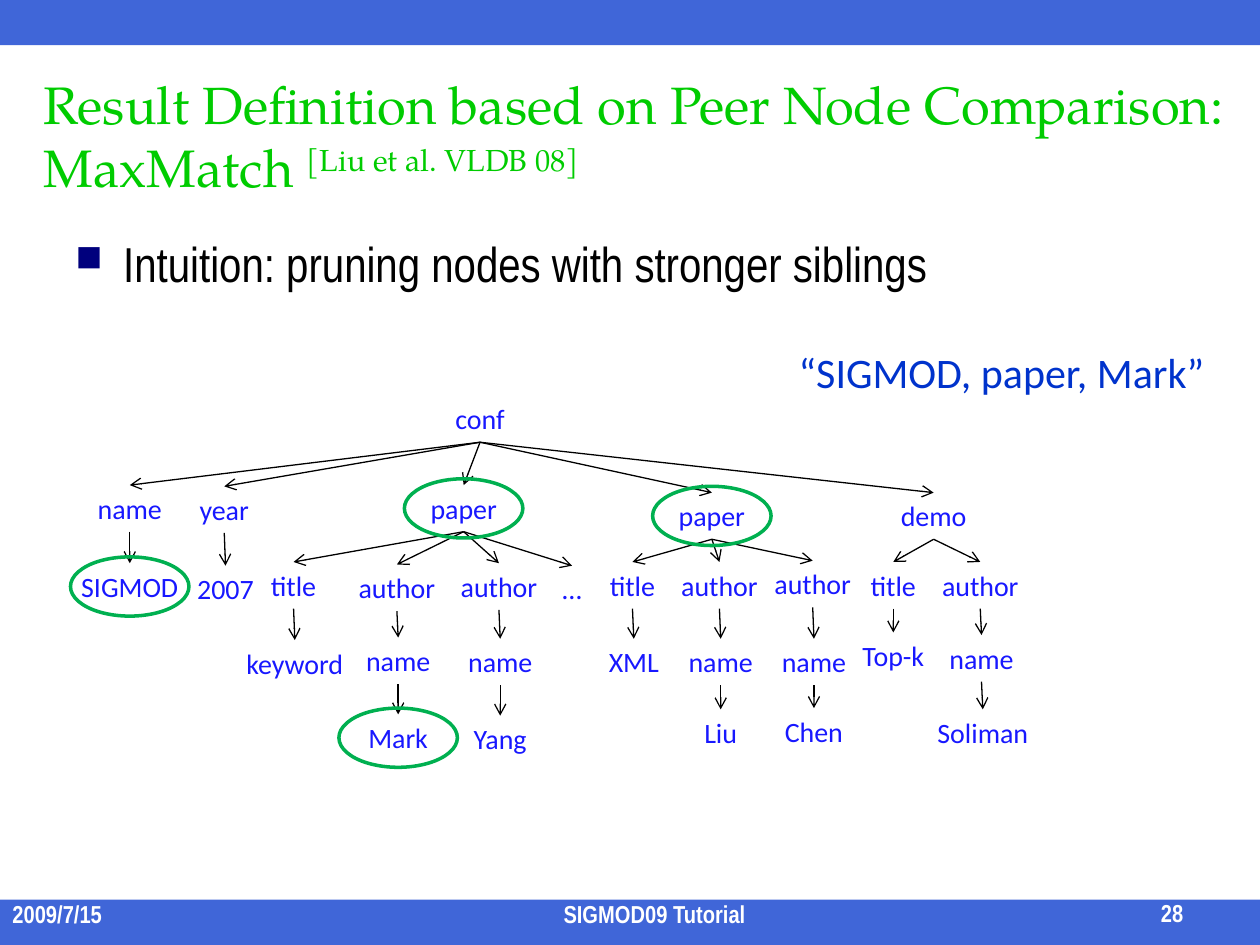
from dataclasses import dataclass
from typing import Iterator

from lxml.etree import SubElement
from pptx import Presentation
from pptx.dml.color import RGBColor
from pptx.enum.shapes import MSO_CONNECTOR, MSO_SHAPE
from pptx.enum.text import MSO_ANCHOR, PP_ALIGN
from pptx.oxml.ns import qn
from pptx.util import Emu, Inches, Pt

BAND_BLUE = RGBColor(0x00, 0x33, 0xCC)
TITLE_GREEN = RGBColor(0x00, 0xCC, 0x00)
NODE_BLUE = RGBColor(0x18, 0x18, 0xFF)
MATCH_GREEN = RGBColor(0x00, 0xB0, 0x50)
BLACK = RGBColor(0x00, 0x00, 0x00)
WHITE = RGBColor(0xFF, 0xFF, 0xFF)
BULLET_NAVY = "00007D"

SERIF, NARROW, SANS = "TeX Gyre Pagella", "Arial Narrow", "Calibri"

# The slide is a grid of 100 columns by 75 rows.
COLUMNS, ROWS = 100, 75
SLIDE_WIDTH, SLIDE_HEIGHT = Inches(10), Inches(7.5)
BAND_ROWS = 3.6
NODE_ROWS = 3.7
RING_COLUMNS, RING_ROWS = 9.4, 4.7


@dataclass(frozen=True)
class Node:
    """A tree label: centre column, top row, width in columns."""
    label: str
    center: float
    top: float
    width: float
    children: tuple["Node", ...] = ()
    matched: bool = False


@dataclass(frozen=True)
class Style:
    font: str
    size: float
    color: RGBColor
    bold: bool = False
    align: PP_ALIGN = PP_ALIGN.LEFT
    anchor: MSO_ANCHOR = MSO_ANCHOR.TOP


@dataclass(frozen=True)
class Footer:
    text: str
    left: float
    top: float
    width: float
    align: PP_ALIGN


TREE = Node("conf", 38.1, 31.4, 6.2, (
    Node("name", 10.3, 38.5, 7.6, (
        Node("SIGMOD", 10.3, 44.7, 10.6, matched=True),)),
    Node("year", 17.8, 38.6, 6.6, (Node("2007", 17.9, 44.9, 9.3),)),
    Node("paper", 36.8, 38.5, 8.1, (
        Node("title", 23.3, 44.6, 7, (Node("keyword", 23.4, 50.8, 10.4),)),
        Node("author", 31.5, 44.8, 8.6, (
            Node("name", 31.6, 50.6, 8.2, (
                Node("Mark", 31.6, 56.7, 12.8, matched=True),)),)),
        Node("author", 39.6, 44.7, 9.1, (
            Node("name", 39.7, 50.7, 7.9, (Node("Yang", 39.7, 56.8, 7),)),)),
        Node("…", 45.4, 44.9, 7),
    ), matched=True),
    Node("paper", 56.5, 39.1, 8.7, (
        Node("title", 50.2, 44.6, 7, (Node("XML", 50.3, 50.7, 9.5),)),
        Node("author", 57.1, 44.6, 9.1, (
            Node("name", 57.2, 50.7, 8.7, (Node("Liu", 57.2, 56.3, 8.3),)),)),
        Node("author", 64.5, 44.5, 9.2, (
            Node("name", 64.6, 50.7, 8.8, (Node("Chen", 64.6, 56.2, 7),)),)),
    ), matched=True),
    Node("demo", 74.1, 39.1, 8.3, (
        Node("title", 70.9, 44.6, 5.7, (Node("Top-k", 70.9, 50.2, 8),)),
        Node("author", 77.8, 44.6, 9.9, (
            Node("name", 77.9, 50.4, 8.7, (Node("Soliman", 78, 56.3, 10.5),)),)),
    )),
))

FOOTERS = (
    Footer("2009/7/15", 0, 71.8, 20.9, PP_ALIGN.LEFT),
    Footer("SIGMOD09 Tutorial", 23.2, 71.8, 57.5, PP_ALIGN.CENTER),
    Footer("28", 82.3, 71.7, 12.6, PP_ALIGN.RIGHT),
)

TITLE_STYLE = Style(SERIF, 30, TITLE_GREEN, anchor=MSO_ANCHOR.MIDDLE)
BODY_STYLE = Style(NARROW, 28, BLACK)
QUERY_STYLE = Style(SANS, 24, BAND_BLUE)
NODE_STYLE = Style(SANS, 16, NODE_BLUE, align=PP_ALIGN.CENTER)


def across(columns: float) -> Emu:
    return Emu(round(SLIDE_WIDTH * columns / COLUMNS))


def down(rows: float) -> Emu:
    return Emu(round(SLIDE_HEIGHT * rows / ROWS))


def area(left: float, top: float, width: float, height: float) -> tuple[Emu, ...]:
    return across(left), down(top), across(width), down(height)


def format_span(span, style: Style) -> None:
    span.font.name = style.font
    span.font.size = Pt(style.size)
    span.font.bold = style.bold
    span.font.color.rgb = style.color


def add_text(page, text: str, place: tuple[Emu, ...], style: Style):
    """Add a one-paragraph text box and return the paragraph."""
    frame = page.shapes.add_textbox(*place).text_frame
    frame.word_wrap = True
    frame.vertical_anchor = style.anchor
    frame.text = text
    paragraph = frame.paragraphs[0]
    paragraph.alignment = style.align
    for span in paragraph.runs:
        format_span(span, style)
    return paragraph


def add_band(page, top: float) -> None:
    band = page.shapes.add_shape(MSO_SHAPE.RECTANGLE, *area(0, top, COLUMNS, BAND_ROWS))
    band.shadow.inherit = False
    band.line.fill.background()
    band.fill.solid()
    band.fill.fore_color.rgb = BAND_BLUE
    color = next(band.fill._xPr.iter(qn("a:srgbClr")))
    SubElement(color, qn("a:alpha"), val="75000")


def add_title(page) -> None:
    paragraph = add_text(
        page, "Result Definition based on Peer Node Comparison: \vMaxMatch ",
        area(2.5, 4.7, 97.5, 12), TITLE_STYLE)
    citation = paragraph.add_run()
    citation.text = "[Liu et al. VLDB 08]"
    format_span(citation, TITLE_STYLE)
    citation.font._element.set("baseline", "30000")


def add_bullet(paragraph) -> None:
    indent = Inches(0.38)
    properties = paragraph._p.get_or_add_pPr()
    properties.set("marL", str(indent))
    properties.set("indent", str(-indent))
    color = SubElement(properties, qn("a:buClr"))
    SubElement(color, qn("a:srgbClr"), val=BULLET_NAVY)
    SubElement(properties, qn("a:buSzPct"), val="75000")
    SubElement(properties, qn("a:buChar"), char="■")


def add_edge(page, parent: Node, child: Node) -> None:
    edge = page.shapes.add_connector(
        MSO_CONNECTOR.STRAIGHT,
        across(parent.center), down(parent.top + NODE_ROWS),
        across(child.center), down(child.top))
    edge.line.color.rgb = BLACK
    edge.line.width = Pt(0.75)
    SubElement(edge.line._get_or_add_ln(), qn("a:tailEnd"), type="arrow")
    SubElement(edge._element.spPr, qn("a:effectLst"))


def add_ring(page, node: Node) -> None:
    ring = page.shapes.add_shape(MSO_SHAPE.OVAL, *area(
        node.center - RING_COLUMNS / 2, node.top + (NODE_ROWS - RING_ROWS) / 2,
        RING_COLUMNS, RING_ROWS))
    ring.shadow.inherit = False
    ring.fill.background()
    ring.line.color.rgb = MATCH_GREEN
    ring.line.width = Pt(2)


def walk(node: Node) -> Iterator[Node]:
    yield node
    for child in node.children:
        yield from walk(child)


def add_tree(page, root: Node) -> None:
    nodes = list(walk(root))
    for node in nodes:
        place = area(node.center - node.width / 2, node.top, node.width, NODE_ROWS)
        add_text(page, node.label, place, NODE_STYLE)
        for child in node.children:
            add_edge(page, node, child)
    for node in nodes:
        if node.matched:
            add_ring(page, node)


def main() -> None:
    deck = Presentation()
    deck.slide_width, deck.slide_height = SLIDE_WIDTH, SLIDE_HEIGHT
    page = deck.slides.add_slide(deck.slide_layouts[6])
    for top in (ROWS - BAND_ROWS, 0):
        add_band(page, top)
    add_title(page)
    add_bullet(add_text(page, "Intuition: pruning nodes with stronger siblings",
                        area(5, 18, 90, 51.2), BODY_STYLE))
    add_tree(page, TREE)
    add_text(page, "“SIGMOD, paper, Mark”", area(62.4, 27, 35.8, 5), QUERY_STYLE)
    for footer in FOOTERS:
        style = Style(NARROW, 14, WHITE, True, footer.align, MSO_ANCHOR.BOTTOM)
        add_text(page, footer.text, area(footer.left, footer.top, footer.width, 2.4), style)
    deck.save("out.pptx")


if __name__ == "__main__":
    main()
